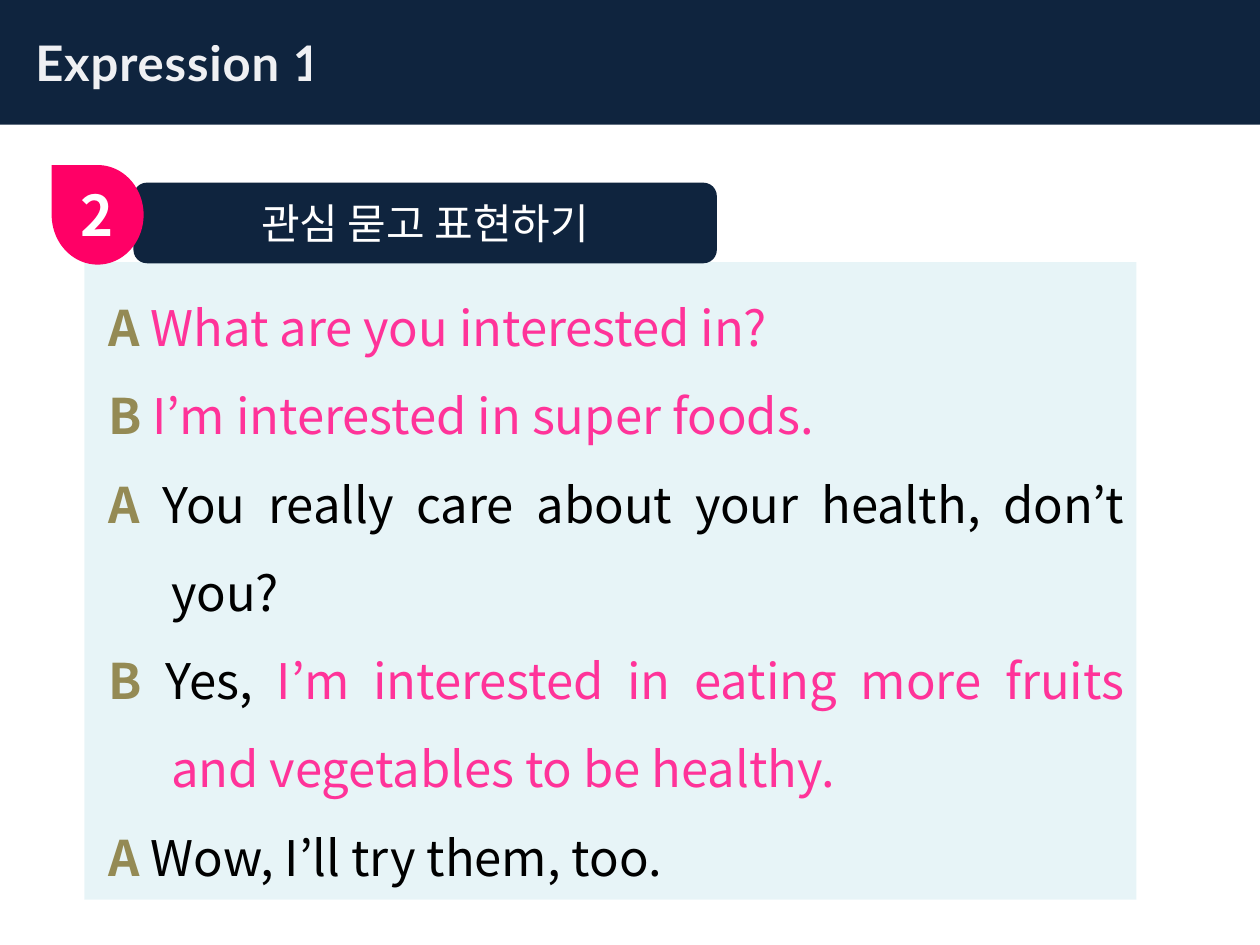
from lxml import etree
from pptx import Presentation, util as u
from pptx.dml import color
from pptx.enum import shapes, text
from pptx.oxml import ns

COLORS = {
    "navy": "0F243E", "panel": "B7DEE8", "badge": "FF0066", "title": "FCFCFD",
    "white": "FFFFFF", "speaker": "948A54", "key": "FF3399", "plain": "000000",
}
DIALOGUE = [
    ("A ", [("What are you interested in?", "key")]),
    ("B ", [("I’m interested in super foods.", "key")]),
    ("A ", [("You really care about your health, don’t you?", "plain")]),
    ("B ", [("Yes, ", "plain"),
            ("I’m interested in eating more fruits and vegetables to be healthy.", "key")]),
    ("A ", [("Wow, I’ll try them, too.", "plain")]),
]


class LessonSlide:
    body_font = "Noto Sans CJK KR"
    title_font = "Lato"

    def __init__(self, deck):
        self.deck = deck
        self.slide = deck.slides.add_slide(deck.slide_layouts[5])

    def box(self, left, top, width, height):
        full_width, full_height = self.deck.slide_width, self.deck.slide_height
        return [round(share * full / 100) for share, full in
                ((left, full_width), (top, full_height), (width, full_width), (height, full_height))]

    def paint(self, fill, name, opacity=100):
        fill.solid()
        fill.fore_color.rgb = color.RGBColor.from_string(COLORS[name])
        if opacity < 100:
            tint = fill._xPr.find(ns.qn("a:solidFill"))[0]
            etree.SubElement(tint, ns.qn("a:alpha")).set("val", str(opacity * 1000))

    def run(self, paragraph, words, size, name, bold=False, font=body_font, opacity=100):
        run = paragraph.add_run()
        run.text = words
        run.font.size, run.font.bold, run.font.name = u.Pt(size), bold, font
        self.paint(run.font.fill, name, opacity)
        etree.SubElement(run.font._element, ns.qn("a:ea")).set("typeface", font)
        return run

    def shape(self, kind, box, name, opacity=100):
        shape = self.slide.shapes.add_shape(kind, *self.box(*box))
        shape.shadow.inherit = False
        shape.line.fill.background()
        self.paint(shape.fill, name, opacity)
        return shape

    def title(self, words, box):
        bar = self.slide.shapes.title
        bar.left, bar.top, bar.width, bar.height = self.box(*box)
        self.paint(bar.fill, "navy")
        frame = bar.text_frame
        frame.auto_size = text.MSO_AUTO_SIZE.NONE
        frame.vertical_anchor = text.MSO_ANCHOR.MIDDLE
        frame.margin_left = u.Inches(0.28)
        frame.paragraphs[0].alignment = text.PP_ALIGN.LEFT
        run = self.run(frame.paragraphs[0], words, 28, "title", True, self.title_font, 95)
        run.font._element.set("spc", "50")

    def dialogue(self, lines, box):
        frame = self.shape(shapes.MSO_SHAPE.RECTANGLE, box, "panel", 32).text_frame
        frame.word_wrap = True
        frame.vertical_anchor = text.MSO_ANCHOR.TOP
        for index, (speaker, phrases) in enumerate(lines):
            line = frame.add_paragraph() if index else frame.paragraphs[0]
            line.alignment = text.PP_ALIGN.JUSTIFY
            line.line_spacing = 1.5
            line._p.get_or_add_pPr().set("marL", str(u.Inches(0.59)))
            line._p.get_or_add_pPr().set("indent", str(u.Inches(-0.5)))
            self.run(line, speaker, 28, "speaker", True)
            for words, name in phrases:
                self.run(line, words, 28, name)

    def heading(self, words, box):
        frame = self.shape(shapes.MSO_SHAPE.FLOWCHART_ALTERNATE_PROCESS, box, "navy").text_frame
        frame.vertical_anchor = text.MSO_ANCHOR.MIDDLE
        frame.paragraphs[0].alignment = text.PP_ALIGN.CENTER
        self.run(frame.paragraphs[0], words, 24, "white")

    def badge(self, number, drop_box, number_box):
        self.shape(shapes.MSO_SHAPE.TEAR, drop_box, "badge").rotation = 270
        frame = self.slide.shapes.add_textbox(*self.box(*number_box)).text_frame
        frame.word_wrap = True
        frame.auto_size = text.MSO_AUTO_SIZE.SHAPE_TO_FIT_TEXT
        self.run(frame.paragraphs[0], number, 32, "white", True)


def main():
    deck = Presentation()
    deck.slide_width, deck.slide_height = u.Inches(10), u.Inches(7.5)
    lesson = LessonSlide(deck)
    lesson.title("Expression 1", (0, 0, 100, 13.2))
    lesson.dialogue(DIALOGUE, (6.7, 27.73, 83.5, 67.47))
    lesson.heading("관심 묻고 표현하기", (10.6, 19.33, 46.3, 8.53))
    lesson.badge("2", (3.8, 17.87, 7.9, 9.73), (5.4, 18.4, 4.7, 8.53))
    deck.save("out.pptx")


if __name__ == "__main__":
    main()
